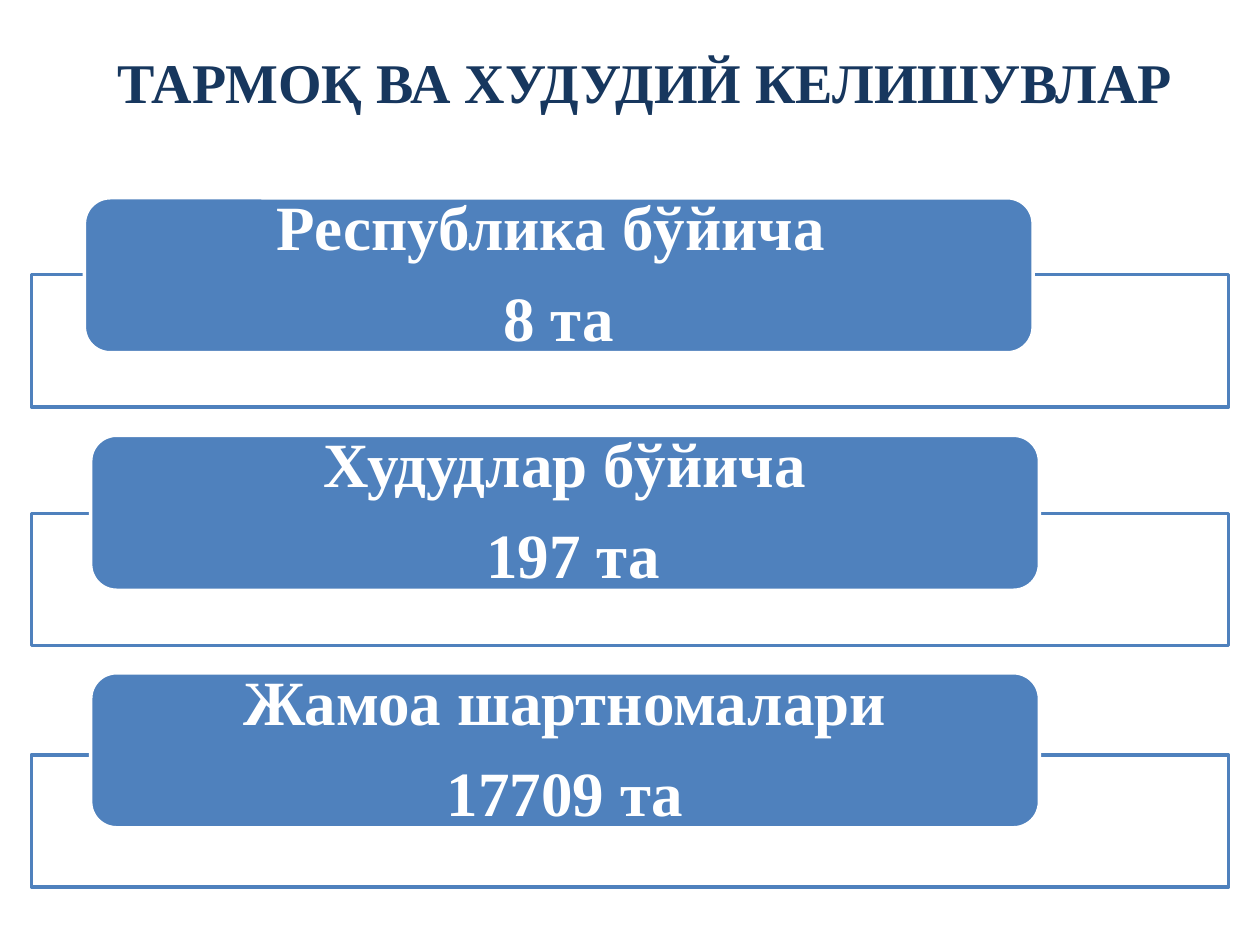
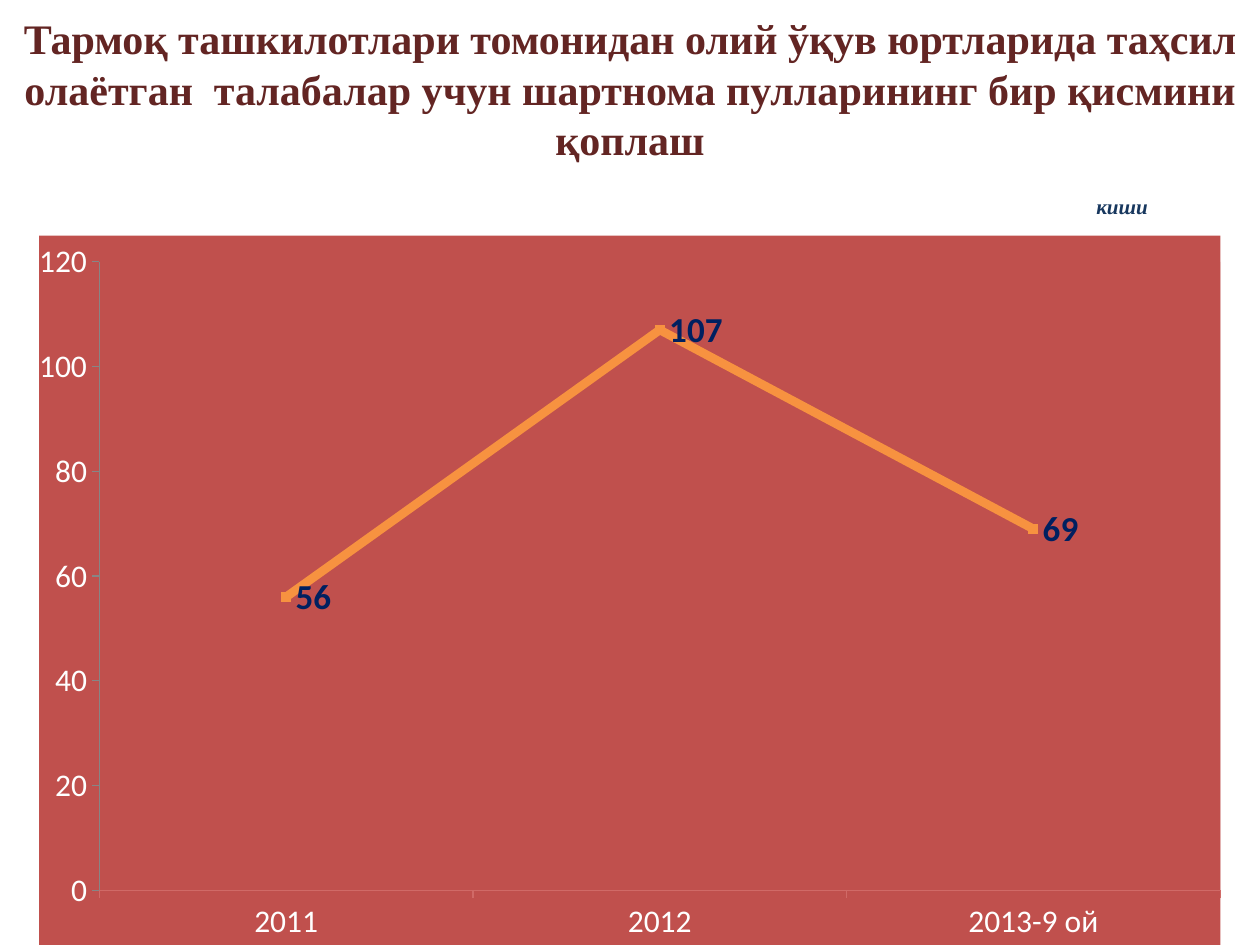
from pptx import Presentation
from pptx.chart import data
from pptx.dml.color import RGBColor
from pptx.enum import chart as ch, shapes, text
from pptx.oxml import parse_xml
from pptx.oxml import ns
from pptx.util import Inches, Pt
from lxml import etree

NAVY = RGBColor(0x17, 0x37, 0x5E)
MAROON = RGBColor(0x63, 0x25, 0x23)
BLUE = RGBColor(0x4F, 0x81, 0xBD)
WHITE = RGBColor(0xFF, 0xFF, 0xFF)
RED = RGBColor(0xC0, 0x50, 0x4D)
ORANGE = RGBColor(0xF7, 0x92, 0x40)
YELLOW = RGBColor(0xFF, 0xFF, 0x00)
INK = RGBColor(0x00, 0x20, 0x60)
GRAY = RGBColor(0x86, 0x86, 0x86)
PINK = RGBColor(0xD0, 0x6A, 0x67)
SERIF = "Times New Roman"


def style(frame, size, color, italic=False):
    """Bold, centred serif text."""
    for para in frame.paragraphs:
        para.alignment = text.PP_ALIGN.CENTER
        for run in para.runs:
            font = run.font
            font.name, font.size, font.bold = SERIF, Pt(size), True
            font.italic = italic
            font.color.rgb = color


def place(shape, box):
    shape.left, shape.top, shape.width, shape.height = map(Inches, box)


def add_slide(prs, title, box, size, color):
    """Title-only slide with its heading set."""
    slide = prs.slides.add_slide(prs.slide_layouts[5])
    head = slide.shapes.title
    place(head, box)
    frame = head.text_frame
    frame.text = title
    frame.auto_size = text.MSO_AUTO_SIZE.NONE
    frame.vertical_anchor = text.MSO_ANCHOR.TOP
    style(frame, size, color)
    return slide


def add_box(slide, kind, box, fill, line):
    shape = slide.shapes.add_shape(kind, *map(Inches, box))
    shape.shadow.inherit = False
    shape.fill.solid()
    shape.fill.fore_color.rgb = fill
    shape.line.color.rgb = line
    shape.line.width = Pt(2)
    return shape


def add_row(slide, top, indent, drop, lines):
    """Outlined band with a rounded label over its upper edge."""
    kind = shapes.MSO_SHAPE
    band = add_box(slide, kind.RECTANGLE, (0.25, top + drop, 9.5, 1.05), WHITE, BLUE)
    clear = etree.SubElement(band.fill.fore_color._xFill[0], ns.qn("a:alpha"))
    clear.set("val", "90000")
    label = add_box(slide, kind.ROUNDED_RECTANGLE, (indent, top, 7.53, 1.23), BLUE, WHITE)
    frame = label.text_frame
    frame.text = lines
    frame.margin_left = frame.margin_right = Inches(0.31)
    frame.margin_top = frame.margin_bottom = 0
    frame.vertical_anchor = text.MSO_ANCHOR.MIDDLE
    style(frame, 36, WHITE)
    for para in frame.paragraphs:
        para.line_spacing = 0.9
        para.space_after = Pt(13)


def set_plot(chart, x, y, w, h):
    """Fix the inner plot area and colour it like the chart."""
    area = chart._chartSpace.chart.plotArea
    for old in area.findall(ns.qn("c:layout")):
        area.remove(old)
    sizes = "".join(f'<c:{tag} val="{val}"/>' for tag, val in zip("xywh", (x, y, w, h)))
    area.insert(0, parse_xml(
        f'<c:layout {ns.nsdecls("c")}><c:manualLayout><c:layoutTarget val="inner"/>'
        f'<c:xMode val="edge"/><c:yMode val="edge"/>{sizes}</c:manualLayout></c:layout>'))
    fill = f'<a:solidFill><a:srgbClr val="{RED}"/></a:solidFill>'
    look = f'<c:spPr {ns.nsdecls("c", "a")}>{fill}<a:ln><a:noFill/></a:ln></c:spPr>'
    area.append(parse_xml(look))
    chart._chartSpace.chart.addnext(parse_xml(look))


def style_line(line):
    line.smooth = False
    line.format.line.color.rgb = ORANGE
    line.format.line.width = Pt(5)
    for i, color in enumerate((ORANGE, YELLOW, YELLOW)):
        point = line.points[i]
        point.format.line.color.rgb = ORANGE
        point.format.line.width = Pt(5)
        mark = point.marker
        mark.style, mark.size = ch.XL_MARKER_STYLE.SQUARE, 5
        mark.format.fill.solid()
        mark.format.fill.fore_color.rgb = color
        mark.format.line.color.rgb = color
    labels = line.data_labels
    labels.show_value = True
    labels.position = ch.XL_LABEL_POSITION.RIGHT
    labels.font.size, labels.font.bold = Pt(20), True
    labels.font.color.rgb = INK


def add_trend(slide, box):
    """Line chart of students supported per year."""
    table = data.CategoryChartData()
    table.categories = ["2011", "2012", "2013-9 ой"]
    table.add_series("Series 1", (56, 107, 69))
    kind = ch.XL_CHART_TYPE.LINE_MARKERS_STACKED
    chart = slide.shapes.add_chart(kind, *map(Inches, box), table).chart
    chart.has_legend = chart.has_title = False
    chart.font.name, chart.font.size = "Calibri", Pt(18)
    chart.font.color.rgb = WHITE
    for axis, color in ((chart.category_axis, PINK), (chart.value_axis, GRAY)):
        axis.has_major_gridlines = False
        axis.major_tick_mark = ch.XL_TICK_MARK.OUTSIDE
        axis.format.line.color.rgb = color
    scale = chart.value_axis
    scale.minimum_scale, scale.maximum_scale, scale.major_unit = 0, 120, 20
    chart.plots[0].vary_by_categories = False
    style_line(chart.plots[0].series[0])
    set_plot(chart, 0.055, 0.037, 0.949, 0.886)


def add_unit(slide, box):
    note = slide.shapes.add_textbox(*map(Inches, box))
    note.text_frame.word_wrap = True
    note.text_frame.text = "киши"
    style(note.text_frame, 12, NAVY, italic=True)


def main():
    prs = Presentation()
    prs.slide_width, prs.slide_height = Inches(10), Inches(7.5)

    # Agreements by level
    slide = add_slide(prs, "ТАРМОҚ ВА ХУДУДИЙ КЕЛИШУВЛАР",
                      (0.62, 0.33, 9, 0.64), 32, NAVY)
    rows = ((0.67, 0.61, "Республика бўйича \n8 та"),
            (0.72, 0.62, "Худудлар бўйича\n 197 та"),
            (0.72, 0.65, "Жамоа шартномалари\n17709 та"))
    for i, row in enumerate(rows):
        add_row(slide, 1.57 + i * 1.885, *row)

    # Tuition support
    slide = add_slide(prs, "Тармоқ ташкилотлари томонидан олий ўқув юртларида таҳсил "
                      "олаётган  талабалар учун шартнома пулларининг бир қисмини қоплаш",
                      (0, 0.05, 10, 1.31), 24, MAROON)
    add_trend(slide, (0.31, 1.87, 9.38, 5.63))
    add_unit(slide, (8.36, 1.49, 1.09, 0.3))

    prs.save("out.pptx")


if __name__ == "__main__":
    main()
